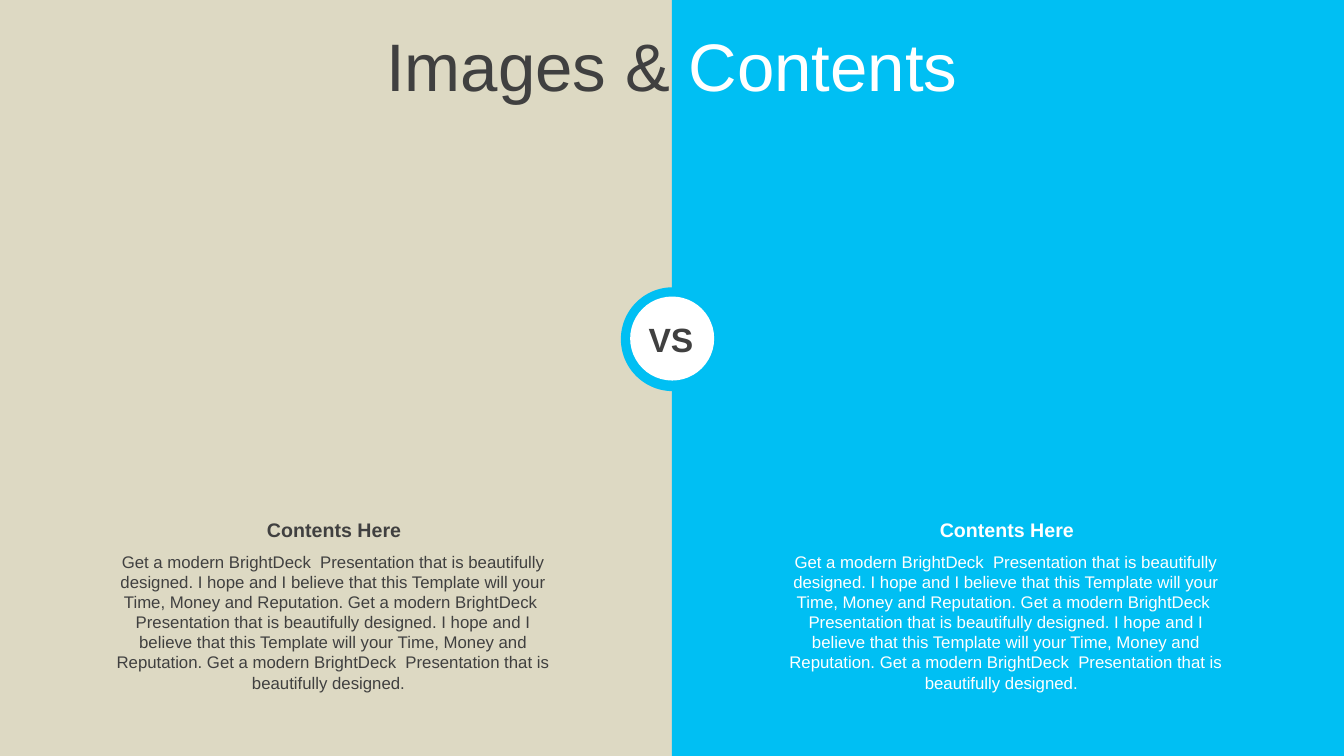
import pptx
import pptx.util
import pptx.dml.color
import pptx.enum.shapes
import pptx.enum.text
from dataclasses import dataclass

Pt = pptx.util.Pt
SHAPE = pptx.enum.shapes.MSO_SHAPE
ALIGN = pptx.enum.text.PP_ALIGN
ANCHOR = pptx.enum.text.MSO_ANCHOR
AUTO_SIZE = pptx.enum.text.MSO_AUTO_SIZE


@dataclass(frozen=True)
class Theme:
    font: str = "Arial"
    sand: str = "DDD9C3"
    blue: str = "00BFF3"
    dark: str = "404040"
    white: str = "FFFFFF"
    title_size: int = 48
    badge_size: int = 24
    heading_size: int = 14
    body_size: int = 12


THEME = Theme()

# Content
TITLE = [("Images & ", THEME.dark), ("Contents", THEME.white)]
BADGE = "VS"
HEADING = "Contents Here"
OFFER = "Get a modern BrightDeck  Presentation that is beautifully designed. "
HOPE = "I hope and I believe that this Template will your Time, Money and Reputation. "
BODY = (OFFER + HOPE) * 2 + OFFER + " "
COLUMN_COLORS = [THEME.dark, THEME.white]

# Layout
WIDTH, HEIGHT = 960, 540
HALF = WIDTH / 2
COLUMN_LEFT, COLUMN_STEP, COLUMN_WIDTH = 75, 480.6, 329
HEADING_TOP, HEADING_HEIGHT = 366.5, 24.2
BODY_TOP, BODY_HEIGHT = 390.3, 108.7
RINGS = [(443.5, 205.2, 74.2, THEME.blue), (450.1, 211.8, 60, THEME.white)]
BADGE_BOX = (455.2, 224.1, 49.7, 36.3)


def rgb(color):
    return pptx.dml.color.RGBColor.from_string(color)


def write_run(paragraph, text, size=THEME.body_size, color=THEME.dark, bold=False):
    run = paragraph.add_run()
    run.text = text
    run.font.name = THEME.font
    run.font.size = Pt(size)
    run.font.bold = bold
    run.font.color.rgb = rgb(color)


def add_text(shapes, box, text, inset=7.2, wrap=True, **text_format):
    shape = shapes.add_textbox(*map(Pt, box))
    frame = shape.text_frame
    frame.word_wrap = wrap
    frame.auto_size = AUTO_SIZE.SHAPE_TO_FIT_TEXT
    frame.margin_left, frame.margin_right = Pt(inset), Pt(8.64)
    frame.margin_top = frame.margin_bottom = Pt(3.6)
    paragraph = frame.paragraphs[0]
    paragraph.alignment = ALIGN.CENTER
    write_run(paragraph, text, **text_format)


def add_filled(shapes, kind, box, color):
    shape = shapes.add_shape(kind, *map(Pt, box))
    shape.shadow.inherit = False
    shape.fill.solid()
    shape.fill.fore_color.rgb = rgb(color)
    shape.line.fill.background()
    return shape


def main():
    presentation = pptx.Presentation()
    presentation.slide_width, presentation.slide_height = Pt(WIDTH), Pt(HEIGHT)
    slide = presentation.slides.add_slide(presentation.slide_layouts[5])
    slide.background.fill.solid()
    slide.background.fill.fore_color.rgb = rgb(THEME.sand)

    # Right half, behind the title
    title = slide.shapes.title
    panel = add_filled(slide.shapes, SHAPE.RECTANGLE, (HALF, 0, HALF, HEIGHT), THEME.blue)
    title.element.addprevious(panel.element)

    # Title
    title.left, title.top, title.width, title.height = Pt(0), Pt(21.6), Pt(WIDTH), Pt(56)
    frame = title.text_frame
    frame.word_wrap = True
    frame.auto_size = AUTO_SIZE.NONE
    frame.vertical_anchor = ANCHOR.MIDDLE
    paragraph = frame.paragraphs[0]
    paragraph.alignment = ALIGN.CENTER
    paragraph.line_spacing = 0.9
    for text, color in TITLE:
        write_run(paragraph, text, size=THEME.title_size, color=color)

    # Badge
    for left, top, diameter, color in RINGS:
        add_filled(slide.shapes, SHAPE.OVAL, (left, top, diameter, diameter), color)
    add_text(slide.shapes, BADGE_BOX, BADGE, wrap=False, size=THEME.badge_size, bold=True)

    # Text columns
    for index, color in enumerate(COLUMN_COLORS):
        left = COLUMN_LEFT + index * COLUMN_STEP
        shapes = slide.shapes.add_group_shape().shapes
        add_text(shapes, (left, HEADING_TOP, COLUMN_WIDTH, HEADING_HEIGHT), HEADING,
                 size=THEME.heading_size, color=color, bold=True)
        add_text(shapes, (left, BODY_TOP, COLUMN_WIDTH, BODY_HEIGHT), BODY,
                 inset=5.76, color=color)

    presentation.save("out.pptx")


if __name__ == "__main__":
    main()
